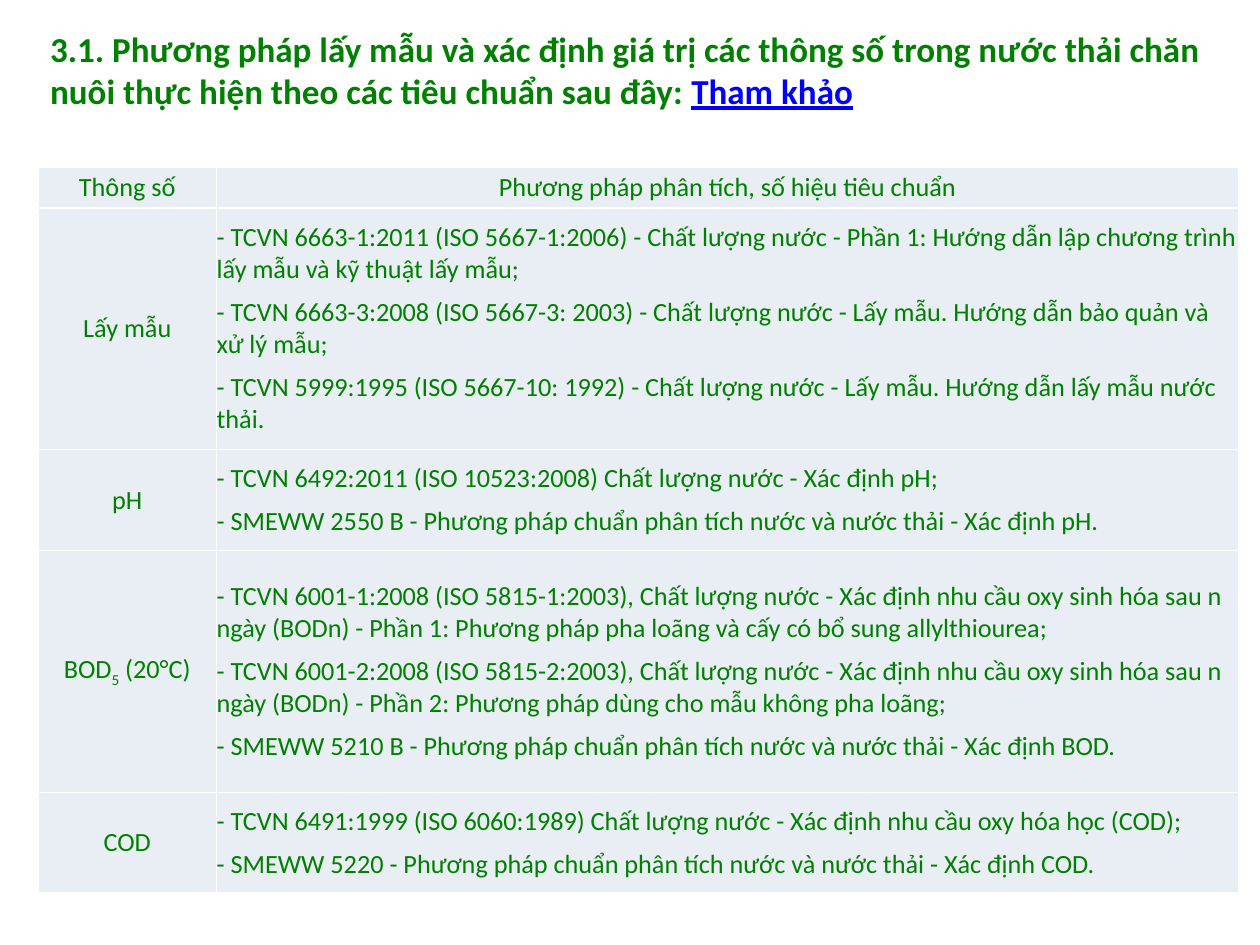
from lxml.etree import SubElement
from pptx import Presentation
from pptx.dml.color import RGBColor
from pptx.enum.text import MSO_ANCHOR as Anchor, MSO_AUTO_SIZE as AutoSize, PP_ALIGN as Align
from pptx.oxml import parse_xml
from pptx.oxml.ns import nsdecls
from pptx.util import Inches, Pt

GREEN, LINK_BLUE, PALE, WHITE = "008000", "0000FF", "E9EDF4", "FFFFFF"
FONT = "Calibri"
COLUMN_WIDTHS = [1.42, 8.11]
ROW_HEIGHTS = [0.32, 1.92, 0.8, 1.92, 0.8]

HEADER = ["Thông số", "Phương pháp phân tích, số hiệu tiêu chuẩn"]
# Each parameter: its label as (text, baseline) pieces, and its standards
PARAMETERS = [
    ([("Lấy mẫu", 0)], [
        "- TCVN 6663-1:2011 (ISO 5667-1:2006) - Chất lượng nước - Phần 1: "
        "Hướng dẫn lập chương trình lấy mẫu và kỹ thuật lấy mẫu;",
        "- TCVN 6663-3:2008 (ISO 5667-3: 2003) - Chất lượng nước - Lấy mẫu. "
        "Hướng dẫn bảo quản và xử lý mẫu;",
        "- TCVN 5999:1995 (ISO 5667-10: 1992) - Chất lượng nước - Lấy mẫu. "
        "Hướng dẫn lấy mẫu nước thải.",
    ]),
    ([("pH", 0)], [
        "- TCVN 6492:2011 (ISO 10523:2008) Chất lượng nước - Xác định pH;",
        "- SMEWW 2550 B - Phương pháp chuẩn phân tích nước và nước thải - Xác định pH.",
    ]),
    ([("BOD", 0), ("5", -25000), (" (20°C)", 0)], [
        "- TCVN 6001-1:2008 (ISO 5815-1:2003), Chất lượng nước - Xác định nhu cầu oxy "
        "sinh hóa sau n ngày (BODn) - Phần 1: Phương pháp pha loãng và cấy có bổ sung "
        "allylthiourea;",
        "- TCVN 6001-2:2008 (ISO 5815-2:2003), Chất lượng nước - Xác định nhu cầu oxy "
        "sinh hóa sau n ngày (BODn) - Phần 2: Phương pháp dùng cho mẫu không pha loãng;",
        "- SMEWW 5210 B - Phương pháp chuẩn phân tích nước và nước thải - Xác định BOD.",
    ]),
    ([("COD", 0)], [
        "- TCVN 6491:1999 (ISO 6060:1989) Chất lượng nước - Xác định nhu cầu oxy hóa học (COD);",
        "- SMEWW 5220 - Phương pháp chuẩn phân tích nước và nước thải - Xác định COD.",
    ]),
]


def color(hex_text):
    return RGBColor.from_string(hex_text)


def add_text(para, text, size=15, fill=GREEN, bold=False, underline=False, baseline=0):
    span = para.add_run()
    span.text = text
    font = span.font
    font.name, font.size, font.bold = FONT, Pt(size), bold
    font.underline = underline
    font.color.rgb = color(fill)
    if baseline:
        font._element.set("baseline", str(baseline))


def add_title(page, left, top, width, height):
    box = page.shapes.add_textbox(left, top, width, height)
    frame = box.text_frame
    frame.word_wrap = True
    frame.auto_size = AutoSize.SHAPE_TO_FIT_TEXT
    para = frame.paragraphs[0]
    add_text(para, "3.1. Phương pháp lấy mẫu và xác định giá trị các thông số trong nước thải "
             "chăn nuôi thực hiện theo các tiêu chuẩn sau đây: ", size=20, bold=True)
    add_text(para, "Tham khảo", size=20, bold=True, fill=LINK_BLUE, underline=True)


def add_borders(cell):
    # Border lines must come before the fill in the cell properties
    properties = cell._tc.get_or_add_tcPr()
    for index, side in enumerate("LRTB"):
        line = parse_xml(f'<a:ln{side} {nsdecls("a")} w="{Pt(1)}"/>')
        namespace = line.nsmap["a"]
        solid = SubElement(line, f"{{{namespace}}}solidFill")
        SubElement(solid, f"{{{namespace}}}srgbClr", val=WHITE)
        properties.insert(index, line)


def fill_cell(cell, paragraphs, align):
    cell.margin_left = cell.margin_right = cell.margin_top = cell.margin_bottom = 0
    cell.vertical_anchor = Anchor.MIDDLE
    cell.fill.solid()
    cell.fill.fore_color.rgb = color(PALE)
    add_borders(cell)
    frame = cell.text_frame
    for index, pieces in enumerate(paragraphs):
        para = frame.add_paragraph() if index else frame.paragraphs[0]
        para.alignment = align
        para.space_before = Pt(6)
        for text, baseline in pieces:
            add_text(para, text, baseline=baseline)


def add_standards_table(page, left, top, width, height):
    table = page.shapes.add_table(len(ROW_HEIGHTS), len(COLUMN_WIDTHS),
                                  left, top, width, height).table
    table.first_row = table.horz_banding = False
    for column, column_width in zip(table.columns, COLUMN_WIDTHS):
        column.width = Inches(column_width)
    for row, row_height in zip(table.rows, ROW_HEIGHTS):
        row.height = Inches(row_height)

    # Header row
    for index, heading in enumerate(HEADER):
        fill_cell(table.cell(0, index), [[(heading, 0)]], Align.CENTER)
    # One row for each parameter
    for index, (label, standards) in enumerate(PARAMETERS, start=1):
        fill_cell(table.cell(index, 0), [label], Align.CENTER)
        fill_cell(table.cell(index, 1), [[(text, 0)] for text in standards], Align.LEFT)


def main():
    deck = Presentation()
    deck.slide_width, deck.slide_height = Inches(10), Inches(7.5)
    page = deck.slides.add_slide(deck.slide_layouts[6])
    left, width = Inches(0.3), Inches(sum(COLUMN_WIDTHS))
    add_title(page, left, Inches(0.17), width, Inches(0.77))
    add_standards_table(page, left, Inches(1.33), width, Inches(sum(ROW_HEIGHTS)))
    deck.save("out.pptx")


if __name__ == "__main__":
    main()
